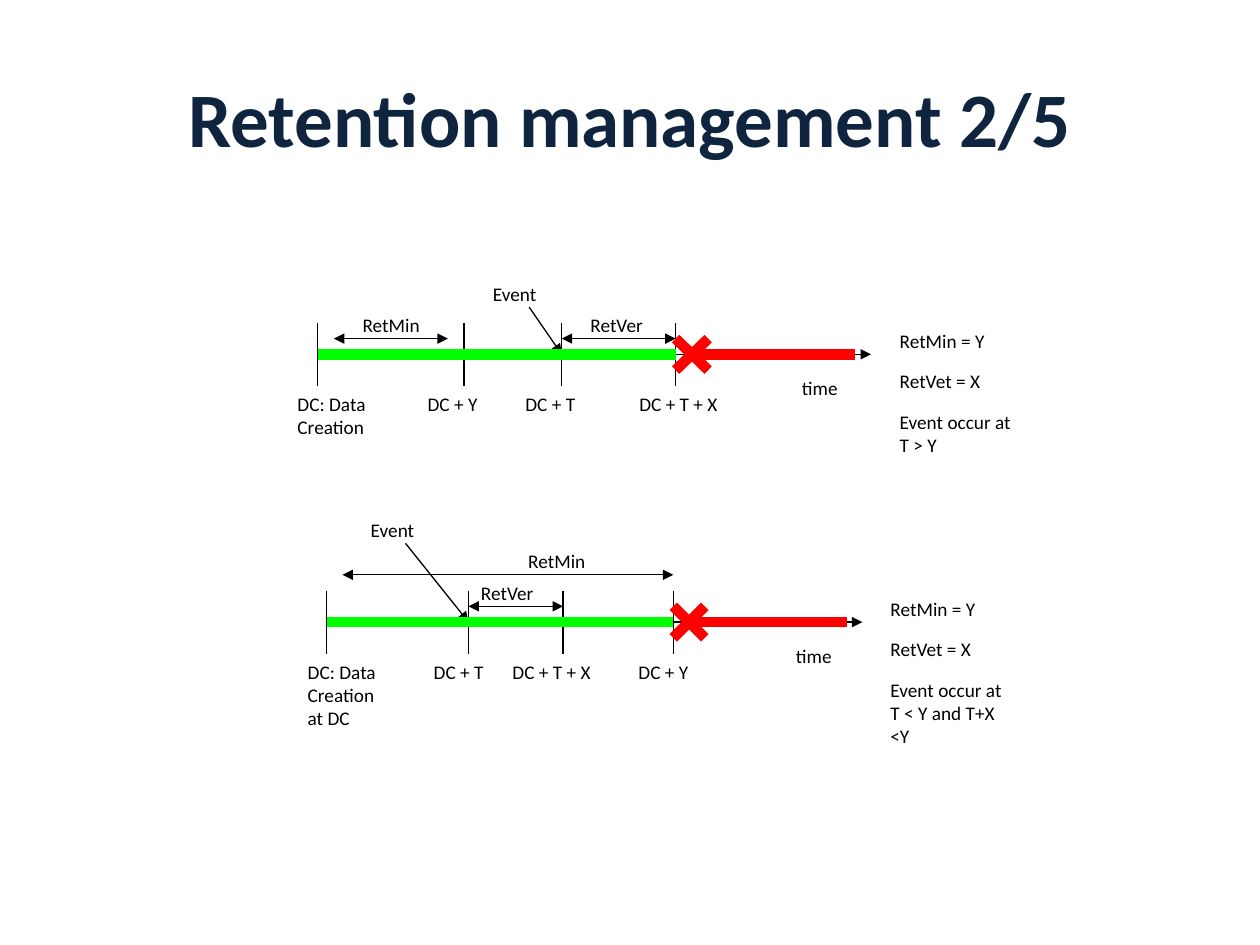
from dataclasses import dataclass

from lxml.etree import SubElement
from pptx import Presentation
from pptx.dml.color import RGBColor as Rgb
from pptx.enum.shapes import MSO_CONNECTOR as Conn
from pptx.enum.text import MSO_ANCHOR as Anchor, PP_ALIGN as Align
from pptx.oxml.ns import qn
from pptx.util import Pt

HUES = {"title": "0F243E", "ink": "000000", "keep": "00FF00", "drop": "FF0000"}
FONT = "Calibri"
ROW = 9
THIN, THICK = 0.75, 6
END, CUT, LAST = 34, 22, 33


@dataclass
class Label:
    text: str
    x: float
    y: float
    wide: float = 6
    high: float = 3


@dataclass
class Span:
    start: float
    stop: float
    y: float


@dataclass
class Event:
    x: float
    y: float
    stop: float


@dataclass
class Chart:
    left: float
    top: float
    unit: float
    ticks: list[float]
    spans: list[Span]
    event: Event
    labels: list[Label]

    def place(self, x: float, y: float) -> tuple[Pt, Pt]:
        return Pt(self.left + x * self.unit), Pt(self.top + y * ROW)


CHARTS = [
    Chart(
        181.5, 202.5, 9.3, [0, 9, 15, CUT],
        [Span(1, 8, -1), Span(15, CUT, -1)],
        Event(13, -3, 15),
        [
            Label("time", 29, 1, 5, 2),
            Label("DC: Data Creation", -2, 2, 7, 4),
            Label("RetMin = Y\nRetVet = X\nEvent occur at T > Y", 35, -2, 9, 7),
            Label("DC + Y", 6, 2),
            Label("DC + T", 12, 2),
            Label("DC + T + X", 19, 2, 9),
            Label("RetMin", 2, -3),
            Label("RetVer", 16, -3),
            Label("Event", 10, -5),
        ],
    ),
    Chart(
        186.75, 355.5, 9, [0, 9, 15, CUT],
        [Span(1, CUT, -3), Span(9, 15, -1)],
        Event(5, -5, 9),
        [
            Label("time", 29, 1, 5, 2),
            Label("DC: Data Creation at DC", -2, 2, 7, 4),
            Label("RetMin = Y\nRetVet = X\nEvent occur at T < Y and T+X <Y", 35, -2, 9, 9),
            Label("DC + T", 6, 2),
            Label("DC + Y", 19, 2),
            Label("DC + T + X", 11, 2, 9),
            Label("RetMin", 12, -5),
            Label("RetVer", 9, -3),
            Label("Event", 2, -7),
        ],
    ),
]


def add_line(slide, chart: Chart, start: tuple, stop: tuple, hue: str = "ink",
             width: float = THIN, ends: tuple = ()) -> None:
    line = slide.shapes.add_connector(
        Conn.STRAIGHT, *chart.place(*start), *chart.place(*stop))
    line.line.color.rgb = Rgb.from_string(HUES[hue])
    line.line.width = Pt(width)
    props = line._element.spPr
    for end in ends:
        SubElement(props.find(qn("a:ln")), qn(f"a:{end}"), type="triangle")
    SubElement(props, qn("a:effectLst"))


def add_text(slide, text: str, box: tuple, size: float, hue: str):
    frame = slide.shapes.add_textbox(*box).text_frame
    frame.word_wrap = True
    frame.text = text
    for para in frame.paragraphs:
        for run in para.runs:
            run.font.name = FONT
            run.font.size = Pt(size)
            run.font.color.rgb = Rgb.from_string(HUES[hue])
    return frame


def add_label(slide, chart: Chart, label: Label) -> None:
    size = Pt(label.wide * chart.unit), Pt(label.high * ROW)
    box = (*chart.place(label.x, label.y), *size)
    for para in add_text(slide, label.text, box, 11, "ink").paragraphs:
        para.space_after = Pt(10)


def add_chart(slide, chart: Chart) -> None:
    add_line(slide, chart, (0, 0), (END, 0), ends=("tailEnd",))
    for x in chart.ticks:
        add_line(slide, chart, (x, -2), (x, 2))
    for span in chart.spans:
        add_line(slide, chart, (span.start, span.y), (span.stop, span.y),
                 ends=("headEnd", "tailEnd"))
    event = chart.event
    add_line(slide, chart, (event.x, event.y), (event.stop, 0), ends=("tailEnd",))
    for label in chart.labels:
        add_label(slide, chart, label)
    add_line(slide, chart, (0, 0), (CUT, 0), "keep", THICK)
    for y in (-1, 1):
        add_line(slide, chart, (CUT, y), (CUT + 2, -y), "drop", THICK)
    add_line(slide, chart, (CUT + 1, 0), (LAST, 0), "drop", THICK)


def add_title(slide, text: str) -> None:
    box = Pt(36), Pt(21.6), Pt(648), Pt(90)
    frame = add_text(slide, text, box, 44, "title")
    frame.vertical_anchor = Anchor.MIDDLE
    para = frame.paragraphs[0]
    para.alignment = Align.CENTER
    para.runs[0].font.bold = True


def main() -> None:
    """Build the slide of two retention timelines."""
    deck = Presentation()
    deck.slide_width, deck.slide_height = Pt(720), Pt(540)
    slide = deck.slides.add_slide(deck.slide_layouts[6])
    add_title(slide, "Retention management 2/5")
    for chart in CHARTS:
        add_chart(slide, chart)
    deck.save("out.pptx")


if __name__ == "__main__":
    main()
